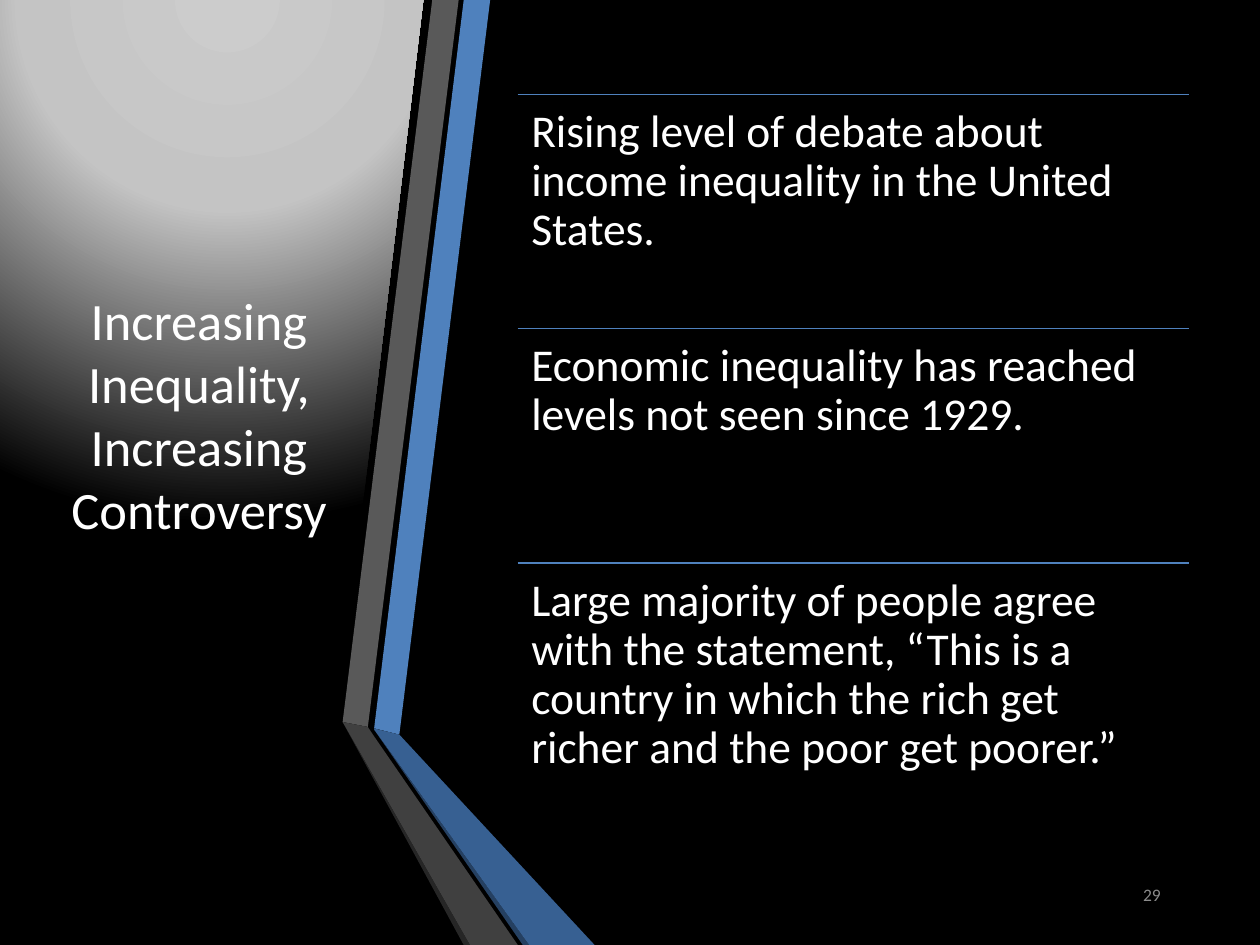
from lxml import etree
from pptx import Presentation
from pptx.dml.color import RGBColor
from pptx.enum.shapes import MSO_CONNECTOR
from pptx.enum.text import MSO_ANCHOR, PP_ALIGN
from pptx.oxml import parse_xml
from pptx.oxml.ns import qn
from pptx.util import Pt

LEFT, CENTER, RIGHT = PP_ALIGN.LEFT, PP_ALIGN.CENTER, PP_ALIGN.RIGHT
TOP, MIDDLE = MSO_ANCHOR.TOP, MSO_ANCHOR.MIDDLE
STRAIGHT = MSO_CONNECTOR.STRAIGHT

WIDTH, HEIGHT = 720, 540
FONT = "Calibri"
BLACK, WHITE, BLUE, PAGE_GREY = "000000", "FFFFFF", "4F81BD", "8C8C8C"

TITLE = "Increasing Inequality, Increasing Controversy"
PAGE_NUMBER = "29"
POINTS = [
    "Rising level of debate about income inequality in the United States.",
    "Economic inequality has reached levels not seen since 1929.",
    "Large majority of people agree with the statement, “This is a country "
    "in which the rich get richer and the poor get poorer.”",
]

GLOW_PANEL = [(190.1, 0), (241.9, 0), (192.2, 414), (192.2, 414.7), (259.9, HEIGHT),
              (0, HEIGHT), (0, 0)]
GLOW_STOPS = [(0, "CCCCCC"), (40, "C4C4C4"), (100, BLACK)]
GLOW_CENTRE = {"l": 50, "t": -80, "r": 50, "b": 180}

RIBBONS = [
    (BLUE, [(213.8, 416.2), (228.2, 419.8), (280.1, 0), (265, 0)]),
    ("595959", [(262.1, 0), (247, 0), (195.8, 412.6), (210.2, 415.4)]),
    ("262626", [(195.8, 412.6), (265, HEIGHT), (268.6, HEIGHT)]),
    ("254061", [(213.8, 416.9), (298.8, HEIGHT), (302.4, HEIGHT)]),
    ("376092", [(213.8, 416.9), (302.4, HEIGHT), (339.8, HEIGHT), (228.2, 419.8),
                (213.8, 416.2)]),
    ("404040", [(295.9, HEIGHT), (213.1, 419.8), (210.2, 415.4), (195.8, 412.6),
                (268.6, HEIGHT)]),
]

LIST_LEFT, LIST_TOP, LIST_WIDTH, ROW_HEIGHT = 295.8, 54, 383.5, 133.9


def rgb(colour):
    return RGBColor.from_string(colour)


def add_outline(slide, corners, colour):
    (x, y), *others = [(Pt(x), Pt(y)) for x, y in corners]
    builder = slide.shapes.build_freeform(x, y)
    builder.add_line_segments(others, close=True)
    outline = builder.convert_to_shape()
    outline.shadow.inherit = False
    outline.line.fill.background()
    outline.fill.solid()
    outline.fill.fore_color.rgb = rgb(colour)
    return outline


def add_glow(panel):
    """Replace the panel's solid fill by a circular gradient."""
    stops = "".join(
        f'<a:gs pos="{position * 1000}"><a:srgbClr val="{colour}"/></a:gs>'
        for position, colour in GLOW_STOPS)
    centre = " ".join(f'{side}="{share * 1000}"' for side, share in GLOW_CENTRE.items())
    gradient = parse_xml(
        '<a:gradFill xmlns:a="http://schemas.openxmlformats.org/drawingml/2006/main">'
        f'<a:gsLst>{stops}</a:gsLst>'
        f'<a:path path="circle"><a:fillToRect {centre}/></a:path></a:gradFill>')
    properties = panel.fill._xPr
    properties.replace(properties.find(qn("a:solidFill")), gradient)


def add_text(slide, words, box, size, colour, align, anchor, spacing=1.0, **margins):
    frame = slide.shapes.add_textbox(*map(Pt, box)).text_frame
    frame.word_wrap = True
    frame.vertical_anchor = anchor
    for side, margin in margins.items():
        setattr(frame, f"margin_{side}", Pt(margin))
    paragraph = frame.paragraphs[0]
    paragraph.alignment = align
    paragraph.line_spacing = spacing
    run = paragraph.add_run()
    run.text = words
    for name, value in {"name": FONT, "size": Pt(size)}.items():
        setattr(run.font, name, value)
    run.font.color.rgb = rgb(colour)


def add_rule(slide, top):
    rule = slide.shapes.add_connector(
        STRAIGHT, Pt(LIST_LEFT), Pt(top), Pt(LIST_LEFT + LIST_WIDTH), Pt(top))
    rule.line.color.rgb = rgb(BLUE)
    rule.line.width = Pt(0.75)
    etree.SubElement(rule._element.spPr, qn("a:effectLst"))


def main():
    deck = Presentation()
    deck.slide_width, deck.slide_height = Pt(WIDTH), Pt(HEIGHT)
    slide = deck.slides.add_slide(deck.slide_layouts[6])
    slide.background.fill.solid()
    slide.background.fill.fore_color.rgb = rgb(BLACK)

    add_glow(add_outline(slide, GLOW_PANEL, BLACK))
    for colour, corners in RIBBONS:
        add_outline(slide, corners, colour)

    # The deep bottom margin lifts the title by half a line.
    add_text(slide, TITLE, (31.5, 54, 164.5, 401.5), 30, WHITE, CENTER, MIDDLE, bottom=40)
    add_text(slide, PAGE_NUMBER, (606, 497, 64.4, 28.8), 10, PAGE_GREY, RIGHT, MIDDLE)

    for row, point in enumerate(POINTS):
        top = LIST_TOP + row * ROW_HEIGHT
        add_rule(slide, top)
        add_text(slide, point, (LIST_LEFT, top, LIST_WIDTH, ROW_HEIGHT), 26, WHITE,
                 LEFT, TOP, 0.9, left=7.8, top=7.8, right=7.8, bottom=7.8)

    deck.save("out.pptx")


if __name__ == "__main__":
    main()
